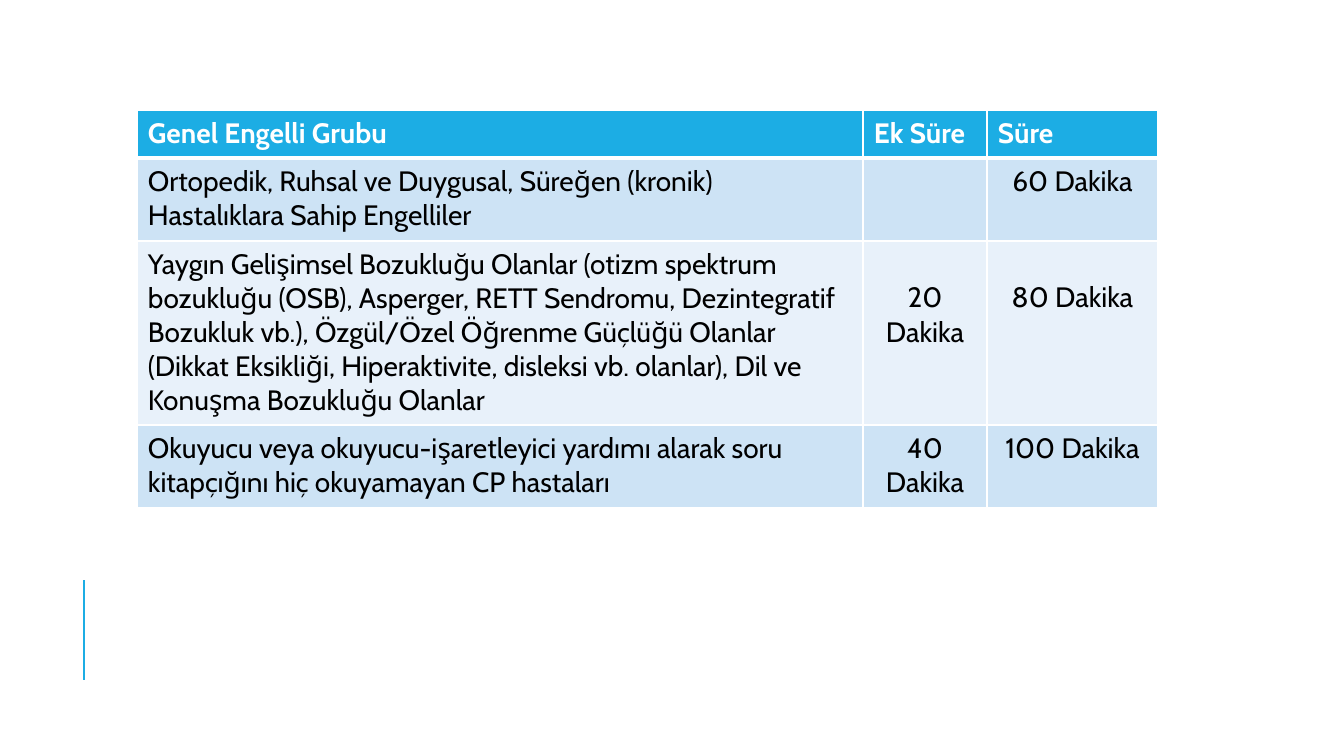
from pptx import Presentation
from pptx.dml.color import RGBColor
from pptx.enum.shapes import MSO_CONNECTOR
from pptx.enum.text import PP_ALIGN
from pptx.oxml.ns import qn
from pptx.util import Emu, Pt
from lxml import etree

STRAIGHT = MSO_CONNECTOR.STRAIGHT
LEFT, CENTER = PP_ALIGN.LEFT, PP_ALIGN.CENTER

THEME = {
    "font": "Cabin",
    "size": Pt(20),
    "accent": RGBColor.from_string("1CADE4"),
    "bands": [RGBColor.from_string("CDE3F5"), RGBColor.from_string("E8F1FA")],
    "header_text": RGBColor.from_string("FFFFFF"),
    "body_text": RGBColor.from_string("000000"),
    "border": "FFFFFF",
}
LINE_HEIGHT = 34
PAD_X, PAD_Y = 11, 6


def px(value):
    return Emu(round(value * 914400 / 100.8))


def add_border(cell, side, width):
    line = etree.SubElement(cell._tc.get_or_add_tcPr(), qn(f"a:{side}"), w=str(Pt(width)))
    fill = etree.SubElement(line, qn("a:solidFill"))
    etree.SubElement(fill, qn("a:srgbClr"), val=THEME["border"])


prs = Presentation()
prs.slide_width, prs.slide_height = px(1344), px(756)
slide = prs.slides.add_slide(prs.slide_layouts[6])

# Accent line at the lower left
accent_line = slide.shapes.add_connector(STRAIGHT, px(84), px(680), px(84), px(580))
accent_line.line.color.rgb = THEME["accent"]
accent_line.line.width = Pt(1.5)
etree.SubElement(accent_line._element.spPr, qn("a:effectLst"))

# Exam times by disability group
exam_times = [
    ("Genel Engelli Grubu", "Ek Süre", "Süre"),
    ("Ortopedik, Ruhsal ve Duygusal, Süreğen (kronik) Hastalıklara Sahip Engelliler",
     "", "60 Dakika"),
    ("Yaygın Gelişimsel Bozukluğu Olanlar (otizm spektrum bozukluğu (OSB), Asperger, "
     "RETT Sendromu, Dezintegratif Bozukluk vb.), Özgül/Özel Öğrenme Güçlüğü Olanlar "
     "(Dikkat Eksikliği, Hiperaktivite, disleksi vb. olanlar), Dil ve Konuşma "
     "Bozukluğu Olanlar", "20 Dakika", "80 Dakika"),
    ("Okuyucu veya okuyucu-işaretleyici yardımı alarak soru kitapçığını hiç "
     "okuyamayan CP hastaları", "40 Dakika", "100 Dakika"),
]
LOWERED_ROW = 2  # its times start one line further down
column_widths = [726, 124, 171]
row_heights = [48, 83, 184, 83]

times_table = slide.shapes.add_table(
    len(row_heights), len(column_widths), px(137), px(110),
    px(sum(column_widths)), px(sum(row_heights))).table
times_table.horz_banding = False
for column, width in zip(times_table.columns, column_widths):
    column.width = px(width)
for row, height in zip(times_table.rows, row_heights):
    row.height = px(height)

for r, entries in enumerate(exam_times):
    is_header = r == 0
    for c, entry in enumerate(entries):
        cell = times_table.cell(r, c)
        lowered = r == LOWERED_ROW and c > 0
        cell.margin_left = cell.margin_right = px(PAD_X)
        cell.margin_top = px(PAD_Y + (LINE_HEIGHT if lowered else 0))
        cell.margin_bottom = px(PAD_Y)

        # Borders come before the fill in the cell properties
        for side in ("lnL", "lnR", "lnT", "lnB"):
            under_header = (r, side) in ((0, "lnB"), (1, "lnT"))
            add_border(cell, side, 3 if under_header else 1)
        cell.fill.solid()
        cell.fill.fore_color.rgb = THEME["accent"] if is_header else THEME["bands"][(r - 1) % 2]

        cell.text_frame.text = entry
        paragraph = cell.text_frame.paragraphs[0]
        paragraph.alignment = LEFT if is_header or c == 0 else CENTER
        paragraph.font.size = THEME["size"]
        for run in paragraph.runs:
            run.font.name = THEME["font"]
            run.font.size = THEME["size"]
            run.font.bold = is_header
            run.font.color.rgb = THEME["header_text" if is_header else "body_text"]

prs.save("out.pptx")
